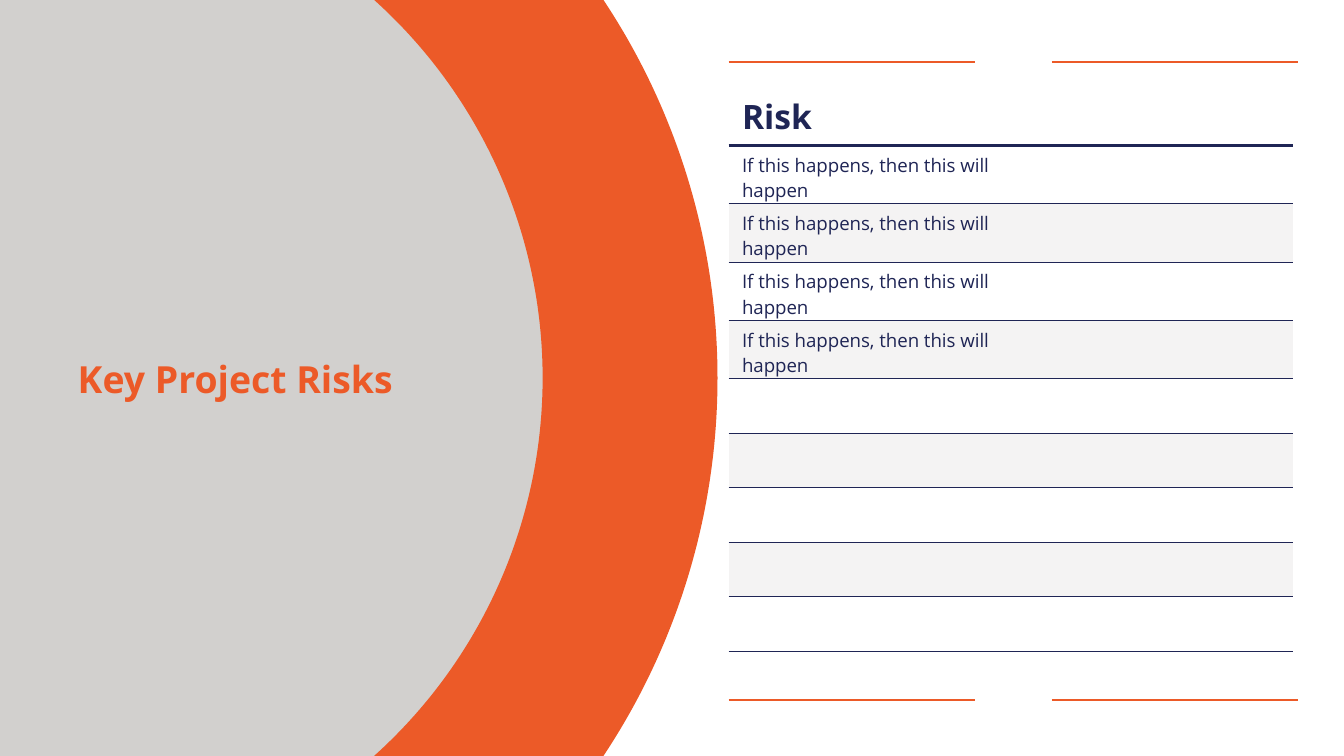
"""Build the key project risks slide."""
import pptx
import pptx.dml.color
import pptx.enum.shapes
import pptx.enum.text
import pptx.oxml
import pptx.oxml.ns
import pptx.util
from dataclasses import dataclass

Cm = pptx.util.Cm
Pt = pptx.util.Pt
SHAPE = pptx.enum.shapes.MSO_SHAPE


@dataclass(frozen=True)
class Theme:
    font: str = "Open Sans"
    orange: str = "EC5A28"
    navy: str = "1F2555"
    grey: str = "D2D0CE"
    band: str = "F4F3F3"
    title_pt: int = 20
    header_pt: int = 18
    body_pt: int = 10
    accent_pt: float = 1
    header_rule_pt: float = 1.5
    row_rule_pt: float = 0.5


THEME = Theme()
TITLE = "Key Project Risks"
HEADER = "Risk"
RISKS = ["If this happens, then this will happen"] * 4
EMPTY_ROWS = 5

SLIDE_W, SLIDE_H = 25.4, 14.29
PANEL_W = 11.23
TITLE_BOX = (1.47, 6.73, 9.65, 0.84)
ARC_LEFT, ARC_TOP, ARC_SIZE = -12.27, -5.77, 25.83
ARC_ADJUSTMENTS = (108, 0.2, 0.128)
TABLE_LEFT, TABLE_TOP = 13.77, 1.65
COLUMN_WIDTHS = (6.35, 4.32)
HEADER_H, ROW_H = 1.1, 1.03
RULE_STARTS, RULE_W = (13.77, 19.88), 4.66
RULE_TOPS = (1.17, 13.23)
NO_STYLE_NO_GRID = "{2D5ABB26-0587-4C30-8999-92F81FD0307C}"


def rgb(value):
    return pptx.dml.color.RGBColor.from_string(value)


def style_text(p, size, color, bold=False):
    p.font.name, p.font.size, p.font.bold = THEME.font, Pt(size), bold
    p.font.color.rgb = rgb(color)
    for r in p.runs:
        r.font.name, r.font.size, r.font.bold = THEME.font, Pt(size), bold
        r.font.color.rgb = rgb(color)


def add_solid(s, shape, box, color):
    sp = s.shapes.add_shape(shape, *map(Cm, box))
    sp.shadow.inherit = False
    sp.fill.solid()
    sp.fill.fore_color.rgb = rgb(color)
    sp.line.fill.background()
    return sp


def add_title(s):
    tf = s.shapes.add_textbox(*map(Cm, TITLE_BOX)).text_frame
    tf.word_wrap = True
    tf.margin_left = tf.margin_top = tf.margin_right = tf.margin_bottom = 0
    tf.vertical_anchor = pptx.enum.text.MSO_ANCHOR.MIDDLE
    tf.text = TITLE
    style_text(tf.paragraphs[0], THEME.title_pt, THEME.orange, True)


def add_rule(s, left, top):
    line = s.shapes.add_connector(
        pptx.enum.shapes.MSO_CONNECTOR.STRAIGHT,
        Cm(left), Cm(top), Cm(left + RULE_W), Cm(top))
    line.line.color.rgb = rgb(THEME.orange)
    line.line.width = Pt(THEME.accent_pt)
    line._element.spPr.append(pptx.oxml.parse_xml(
        f'<a:effectLst {pptx.oxml.ns.nsdecls("a")}/>'))


def underline_cell(cell, width):
    cell._tc.get_or_add_tcPr().insert(0, pptx.oxml.parse_xml(
        f'<a:lnB {pptx.oxml.ns.nsdecls("a")} w="{Pt(width)}"><a:solidFill>'
        f'<a:srgbClr val="{THEME.navy}"/></a:solidFill></a:lnB>'))


def add_risk_table(s):
    texts = [HEADER, *RISKS, *[""] * EMPTY_ROWS]
    heights = [HEADER_H] + [ROW_H] * (len(texts) - 1)
    table = s.shapes.add_table(
        len(texts), len(COLUMN_WIDTHS), Cm(TABLE_LEFT), Cm(TABLE_TOP),
        Cm(sum(COLUMN_WIDTHS)), Cm(sum(heights))).table
    table._tbl.tblPr.find(
        pptx.oxml.ns.qn("a:tableStyleId")).text = NO_STYLE_NO_GRID
    table.horz_banding = False
    for column, width in zip(table.columns, COLUMN_WIDTHS):
        column.width = Cm(width)
    for i, (row, text, height) in enumerate(zip(table.rows, texts, heights)):
        row.height = Cm(height)
        is_header = i == 0
        size = THEME.header_pt if is_header else THEME.body_pt
        rule = THEME.header_rule_pt if is_header else THEME.row_rule_pt
        row.cells[0].text_frame.text = text
        for cell in row.cells:
            style_text(cell.text_frame.paragraphs[0], size, THEME.navy, is_header)
            if i and i % 2 == 0:
                cell.fill.solid()
                cell.fill.fore_color.rgb = rgb(THEME.band)
            else:
                cell.fill.background()
            underline_cell(cell, rule)


def main():
    prs = pptx.Presentation()
    prs.slide_width, prs.slide_height = Cm(SLIDE_W), Cm(SLIDE_H)
    s = prs.slides.add_slide(prs.slide_layouts[6])
    add_solid(s, SHAPE.RECTANGLE, (0, 0, PANEL_W, SLIDE_H), THEME.grey)
    add_title(s)
    arc = add_solid(s, SHAPE.BLOCK_ARC,
                    (ARC_LEFT, ARC_TOP, ARC_SIZE, ARC_SIZE), THEME.orange)
    arc.rotation = 90
    for i, value in enumerate(ARC_ADJUSTMENTS):
        arc.adjustments[i] = value
    for top in RULE_TOPS:
        for left in RULE_STARTS:
            add_rule(s, left, top)
    add_risk_table(s)
    prs.save("out.pptx")


if __name__ == "__main__":
    main()
